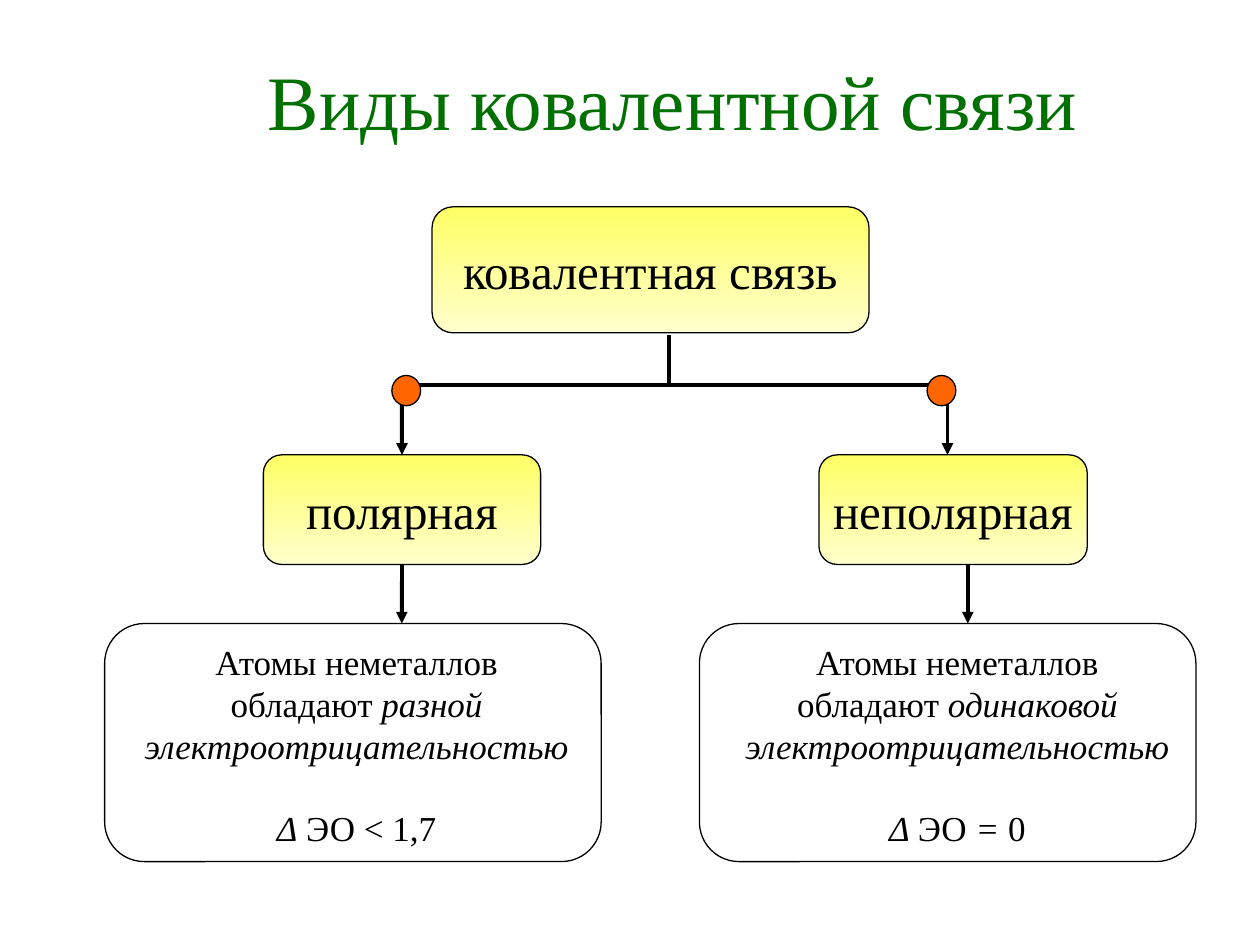
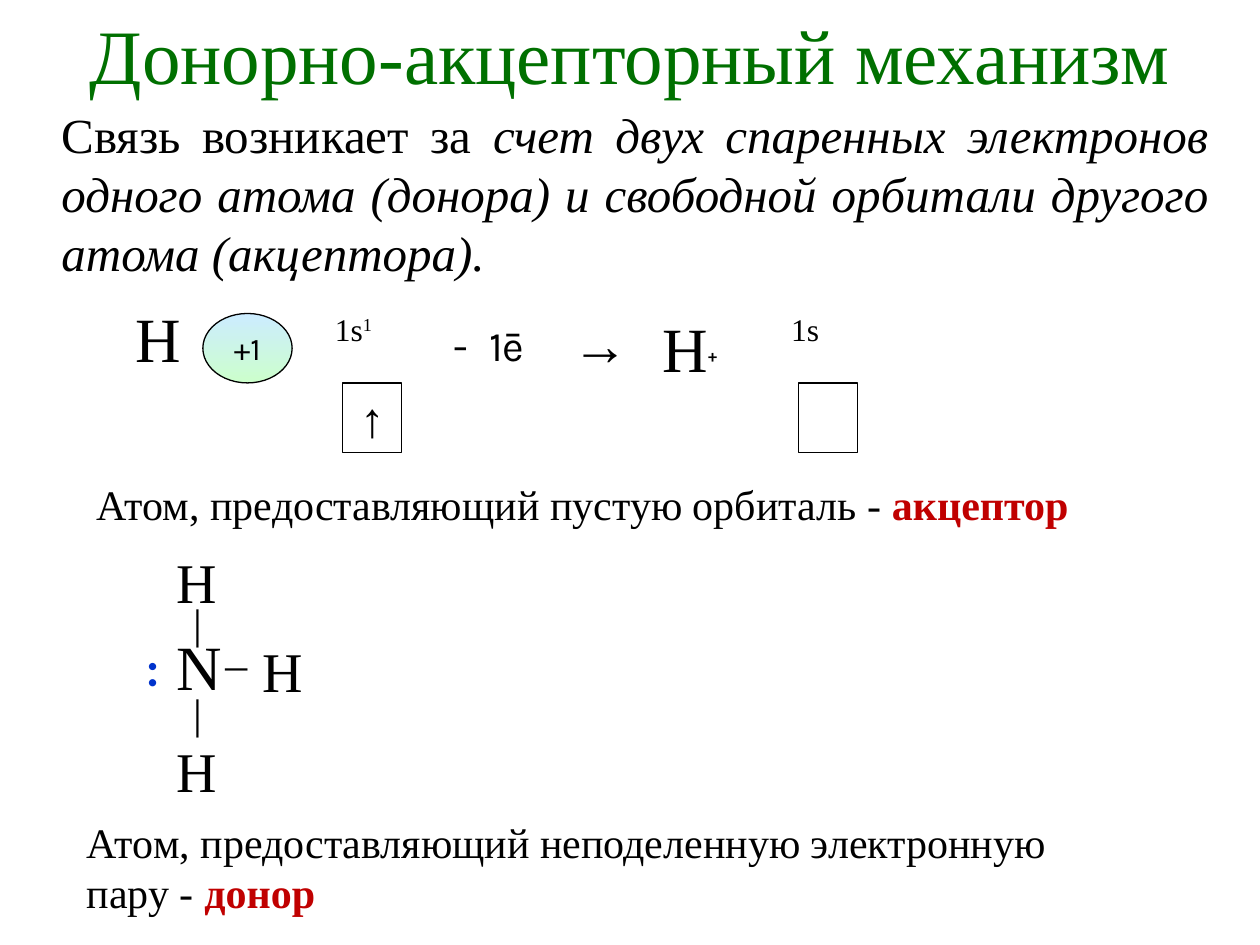
from dataclasses import dataclass
from typing import Optional

import lxml.etree
import pptx
import pptx.dml.color
import pptx.enum.shapes
import pptx.enum.text
import pptx.oxml.ns
import pptx.util

Cm, Pt = pptx.util.Cm, pptx.util.Pt
ALIGN = pptx.enum.text.PP_ALIGN
ANCHOR = pptx.enum.text.MSO_ANCHOR
SHAPE = pptx.enum.shapes.MSO_SHAPE

SERIF = "Times New Roman"
COLORS = {
    "title": "007000", "ink": "000000", "term": "C00000", "pair": "0033CC",
    "node": "FF6600", "yellow": "FFFF66", "cream": "FFFFCC",
    "sky": "CCECFF", "mint": "CCFFCC",
}
TOP, BOTTOM = 0, 2


@dataclass(frozen=True)
class Frame:
    """Left, top, width and height in centimetres."""
    left: float
    top: float
    width: float
    height: float

    def lengths(self) -> tuple:
        return Cm(self.left), Cm(self.top), Cm(self.width), Cm(self.height)


@dataclass(frozen=True)
class Span:
    text: str
    size: float = 18
    color: str = "ink"
    font: str = SERIF
    bold: bool = False
    italic: bool = False
    raised: bool = False


@dataclass(frozen=True)
class Para:
    spans: tuple
    space_before: float = 0
    tab: Optional[float] = None


@dataclass(frozen=True)
class Label:
    frame: Frame
    paras: tuple


def rgb(name: str) -> pptx.dml.color.RGBColor:
    return pptx.dml.color.RGBColor.from_string(COLORS[name])


def line_of(*spans: Span, space_before: float = 0, tab: Optional[float] = None) -> Para:
    return Para(spans, space_before, tab)


def label(frame: Frame, text: str, size: float, **style) -> Label:
    return Label(frame, (line_of(Span(text, size, **style)),))


def add_tab_stop(para, position: float) -> None:
    tabs = lxml.etree.SubElement(
        para._p.get_or_add_pPr(), pptx.oxml.ns.qn("a:tabLst"))
    lxml.etree.SubElement(tabs, pptx.oxml.ns.qn("a:tab"),
                          pos=str(int(Cm(position))), algn="l")


def write(text_frame, paras: tuple, align=ALIGN.LEFT) -> None:
    for index, content in enumerate(paras):
        para = text_frame.add_paragraph() if index else text_frame.paragraphs[0]
        para.alignment = align
        if content.space_before:
            para.space_before = Pt(content.space_before)
        if content.tab:
            add_tab_stop(para, content.tab)
        for item in content.spans:
            span = para.add_run()
            span.text = item.text
            span.font.name = item.font
            span.font.size = Pt(item.size)
            span.font.bold = item.bold
            span.font.italic = item.italic
            span.font.color.rgb = rgb(item.color)
            if item.raised:
                span._r.get_or_add_rPr().set("baseline", "30000")


def add_page(deck, title: str, frame: Frame):
    """Add a title-only page with its title placed and formatted."""
    page = deck.slides.add_slide(deck.slide_layouts[5])
    box = page.shapes.title
    box.left, box.top, box.width, box.height = frame.lengths()
    box.text_frame.vertical_anchor = ANCHOR.MIDDLE
    write(box.text_frame, (line_of(Span(title, 44, "title")),), ALIGN.CENTER)
    return page


def add_text(page, item: Label, align=ALIGN.LEFT) -> None:
    box = page.shapes.add_textbox(*item.frame.lengths())
    box.text_frame.word_wrap = True
    write(box.text_frame, item.paras, align)


def add_figure(page, kind, frame: Frame, fill: tuple = (), caption: Optional[Span] = None):
    """Draw an outlined shape: no colour leaves it open, two make a gradient."""
    box = page.shapes.add_shape(kind, *frame.lengths())
    box.shadow.inherit = False
    box.line.color.rgb = rgb("ink")
    box.line.width = Pt(0.75)
    if len(fill) == 2:
        box.fill.gradient()
        box.fill.gradient_angle = 270
        for position, (stop, name) in enumerate(zip(box.fill.gradient_stops, fill)):
            stop.position = position
            stop.color.rgb = rgb(name)
    elif fill:
        box.fill.solid()
        box.fill.fore_color.rgb = rgb(fill[0])
    else:
        box.fill.background()
    if caption:
        box.text_frame.word_wrap = False
        box.text_frame.vertical_anchor = ANCHOR.MIDDLE
        write(box.text_frame, (line_of(caption),), ALIGN.CENTER)
    return box


def add_line(page, start: tuple, end: tuple, arrow: bool = False):
    line = page.shapes.add_connector(
        pptx.enum.shapes.MSO_CONNECTOR.STRAIGHT, *map(Cm, start + end))
    line.line.color.rgb = rgb("ink")
    line.line.width = Pt(2.25)
    if arrow:
        lxml.etree.SubElement(line.line._get_or_add_ln(),
                              pptx.oxml.ns.qn("a:tailEnd"), type="triangle")
    lxml.etree.SubElement(line._element.spPr, pptx.oxml.ns.qn("a:effectLst"))
    return line


def build_bond_kinds(deck) -> None:
    page = add_page(deck, "Виды ковалентной связи", Frame(2.13, 0.41, 22.86, 3.18))
    kind_top, kind_height, note_top = 9.17, 2.21, 12.57
    kind_bottom = kind_top + kind_height
    branch_y, polar_x, nonpolar_x = 7.77, 8.1, 19.1

    def add_kind(text: str, frame: Frame):
        return add_figure(page, SHAPE.ROUNDED_RECTANGLE, frame,
                          ("yellow", "cream"), Span(text, 28))

    add_kind("ковалентная связь", Frame(8.71, 4.17, 8.81, 2.54))
    polar = add_kind("полярная", Frame(5.31, kind_top, 5.59, kind_height))
    add_kind("неполярная", Frame(16.51, kind_top, 5.41, kind_height))

    add_line(page, (13.49, 6.76), (13.49, branch_y))
    add_line(page, (polar_x, branch_y), (18.9, branch_y))
    to_polar = add_line(page, (polar_x, 7.98), (polar_x, kind_top), arrow=True)
    to_polar.end_connect(polar, TOP)
    add_line(page, (nonpolar_x, branch_y), (nonpolar_x, kind_top), arrow=True)
    from_polar = add_line(page, (polar_x, kind_bottom), (polar_x, note_top), arrow=True)
    from_polar.begin_connect(polar, BOTTOM)
    add_line(page, (19.51, kind_bottom), (19.51, note_top), arrow=True)
    for left in (7.9, 18.69):
        add_figure(page, SHAPE.OVAL, Frame(left, 7.57, 0.58, 0.61), ("node",))

    notes = (
        (2.11, Frame(2.49, 12.78, 9.4, 4.5), "разной",
         (Span("Δ", 20, italic=True), Span(" ЭО < 1,7", 20))),
        (14.1, Frame(14.5, 12.78, 9.6, 4.5), "одинаковой",
         (Span("Δ ", 20, italic=True), Span("ЭО ", 20),
          Span("= ", 20, italic=True), Span("0", 20))),
    )
    for left, frame, degree, condition in notes:
        add_figure(page, SHAPE.ROUNDED_RECTANGLE, Frame(left, note_top, 10.01, 4.8))
        add_text(page, Label(frame, (
            line_of(Span("Атомы неметаллов", 20)),
            line_of(Span("обладают ", 20),
                    Span(f"{degree} электроотрицательностью", 20, italic=True)),
            line_of(*condition, space_before=23),
        )), ALIGN.CENTER)


def build_donor_acceptor(deck) -> None:
    page = add_page(deck, "Донорно-акцепторный механизм", Frame(1.27, -0.03, 22.86, 2.21))
    add_text(page, Label(Frame(0.99, 1.98, 23.62, 3.84), (line_of(
        Span("Связь возникает за ", 28),
        Span("счет двух спаренных электронов одного атома (донора) и свободной "
             "орбитали другого атома (акцептора).", 28, italic=True)),)), ALIGN.JUSTIFY)

    add_figure(page, SHAPE.OVAL, Frame(4.09, 6.32, 1.8, 1.4),
               ("sky", "mint"), Span("+1", font="Karla"))
    for left, electron in ((6.91, Span("↑", 28)), (16.1, None)):
        add_figure(page, SHAPE.RECTANGLE, Frame(left, 7.72, 1.19, 1.4), caption=electron)

    row_top, atom_left = 6.12, 3.3
    ionisation = (
        label(Frame(2.49, 5.92, 1.42, 1.78), "Н", 36),
        Label(Frame(6.5, row_top, 1.88, 1.6), (line_of(Span("1s"), Span("1", raised=True)),)),
        Label(Frame(8.89, 6.32, 2.08, 1.27),
              (line_of(Span("-\t1ē", 24, font="Karla"), tab=0.72),)),
        label(Frame(11.3, row_top, 1.65, 1.6), "→", 32),
        Label(Frame(13.11, row_top, 1.96, 1.78),
              (line_of(Span("Н", 36), Span("+", font="Calibri", bold=True, raised=True)),)),
        label(Frame(15.7, row_top, 1.88, 1.6), "1s", 18),
    )
    ammonia = (
        label(Frame(atom_left, 12.52, 1.42, 1.78), "N", 36),
        label(Frame(3.51, 12.12, 1.24, 1.02), "│", 18),
        label(Frame(3.51, 13.92, 1.24, 1.02), "│", 18),
        label(Frame(4.29, 12.93, 0.97, 1.02), "─", 18),
        label(Frame(2.69, 12.73, 0.69, 1.45), ":", 28,
              color="pair", font="Calibri", bold=True),
        label(Frame(atom_left, 10.92, 1.32, 1.6), "H", 32),
        label(Frame(atom_left, 14.73, 1.32, 1.6), "H", 32),
        label(Frame(5.05, 12.7, 1.32, 1.6), "Н", 32),
    )
    roles = (
        Label(Frame(1.7, 9.53, 20.6, 1.27), (
            line_of(Span("Атом, предоставляющий пустую орбиталь - ", 24),
                    Span("акцептор", 24, "term", bold=True)),)),
        Label(Frame(1.5, 16.33, 20.6, 2.31), (
            line_of(Span("Атом, предоставляющий неподеленную электронную", 24)),
            line_of(Span("пару - ", 24), Span("донор", 24, "term", bold=True)))),
    )
    for item in ionisation + ammonia + roles:
        add_text(page, item)


def main() -> None:
    deck = pptx.Presentation()
    deck.slide_width, deck.slide_height = Cm(25.4), Cm(19.05)
    build_bond_kinds(deck)
    build_donor_acceptor(deck)
    deck.save("out.pptx")


if __name__ == "__main__":
    main()
